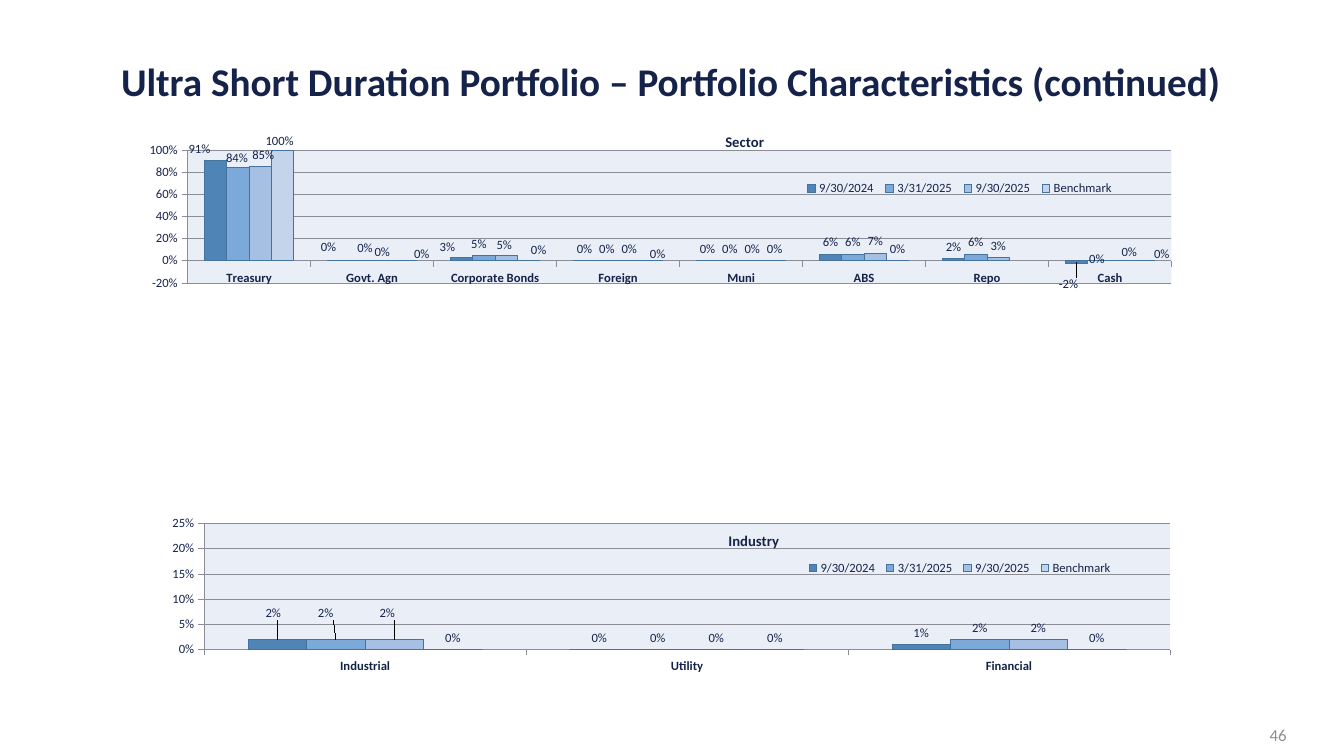
from pptx import Presentation
from pptx.chart.data import CategoryChartData
from pptx.dml.color import RGBColor
from pptx.enum import chart as ec, text
from pptx.oxml import parse_xml
from pptx.oxml.ns import nsdecls
from pptx.util import Inches, Pt

NAVY = RGBColor(0x15, 0x23, 0x4A)
NAVY_ALT = RGBColor(0x15, 0x22, 0x49)
GRAY = RGBColor(0x8C, 0x8D, 0x96)
BAR_LINE = RGBColor(0x43, 0x73, 0x9E)
WHITE = RGBColor(0xFF, 0xFF, 0xFF)
PLOT_FILL = RGBColor(0xEA, 0xEF, 0xF7)
BAR_FILLS = [RGBColor(0x4E, 0x85, 0xB6), RGBColor(0x7A, 0xA9, 0xDA),
             RGBColor(0xA5, 0xC0, 0xE3), RGBColor(0xC4, 0xD5, 0xEB)]
PERIODS = ["9/30/2024", "3/31/2025", "9/30/2025", "Benchmark"]
LABEL_FONT = {"size": Pt(9), "name": "Calibri", "bold": False}

CHARTS = [
    {"title": "Sector", "box": (1.15, 1.23, 10.94, 1.97),
     "cats": ["Treasury", "Govt. Agn", "Corporate Bonds", "Foreign", "Muni", "ABS", "Repo", "Cash"],
     "values": [(0.91, 0, 0.03, 0, 0, 0.06, 0.02, -0.02),
                (0.84, 0, 0.05, 0, 0, 0.06, 0.06, 0),
                (0.85, 0, 0.05, 0, 0, 0.07, 0.03, 0),
                (1, 0, 0, 0, 0, 0, None, 0)],
     "scale": (-0.2, 1, 0.2),
     "plot": {"x": 0.065, "y": 0.131, "w": 0.892, "h": 0.67},
     "heading": {"x": 0.55, "y": 0.03},
     "legend": {"x": 0.62, "y": 0.28, "w": 0.29, "h": 0.09},
     "shifts": [{0: (-0.16, 0.01), 1: (-0.1, -0.02), 2: (-0.14, 0.01), 7: (-0.08, 0.1)},
                {0: (-0.01, 0.02), 1: (0.04, -0.01), 2: (-0.05, 0), 7: (-0.02, 0.1)},
                {0: (0.03, 0), 1: (-0.01, 0.03), 2: (-0.02, 0.01), 7: (0.08, 0.03)},
                {0: (-0.03, 0.03), 1: (0.16, 0.05), 2: (0.1, 0.01), 3: (0.06, 0.05),
                 7: (0.18, 0.05)}]},
    {"title": "Industry", "box": (1.15, 5.1, 10.8, 1.82),
     "cats": ["Industrial", "Utility", "Financial"],
     "values": [(0.02, 0, 0.01), (0.02, 0, 0.02), (0.02, 0, 0.02), (0, 0, 0)],
     "scale": (0, 0.25, 0.05),
     "plot": {"x": 0.081, "y": 0.052, "w": 0.887, "h": 0.687},
     "heading": {"x": 0.56, "y": 0.08},
     "legend": {"x": 0.63, "y": 0.25, "w": 0.29, "h": 0.09},
     "shifts": [{0: (-0.04, -0.15)}, {0: (-0.1, -0.15)}, {0: (-0.07, -0.15)}, {}]},
]


def style(font, color=NAVY, **values):
    for name, value in {**LABEL_FONT, **values}.items():
        setattr(font, name, value)
    font.color.rgb = color


def layout(places, target="", edge=False):
    parts = f'<c:layoutTarget val="{target}"/>' if target else ""
    if edge:
        parts += '<c:xMode val="edge"/><c:yMode val="edge"/>'
    parts += "".join(f'<c:{k} val="{v:.4f}"/>' for k, v in places.items())
    return parse_xml(f'<c:layout {nsdecls("c")}><c:manualLayout>{parts}</c:manualLayout></c:layout>')


prs = Presentation()
prs.slide_width, prs.slide_height = Inches(13.33), Inches(7.5)
s = prs.slides.add_slide(prs.slide_layouts[5])

title = s.shapes.title
title.left, title.top, title.width, title.height = map(Inches, (0.64, 0.58, 12.02, 0.5))
tf = title.text_frame
tf.auto_size = text.MSO_AUTO_SIZE.NONE
tf.vertical_anchor = text.MSO_ANCHOR.MIDDLE
p = tf.paragraphs[0]
p.alignment, p.line_spacing = text.PP_ALIGN.CENTER, 0.9
for words, color in (("Ultra ", NAVY_ALT),
                     ("Short Duration Portfolio – Portfolio Characteristics (continued)", NAVY)):
    r = p.add_run()
    r.text = words
    style(r.font, color, size=Pt(28), bold=True)

for spec_row in CHARTS:
    data = CategoryChartData(number_format="0%")
    data.categories = spec_row["cats"]
    for period, values in zip(PERIODS, spec_row["values"]):
        data.add_series(period, values)
    box = spec_row["box"]
    chart = s.shapes.add_chart(ec.XL_CHART_TYPE.COLUMN_CLUSTERED, *map(Inches, box), data).chart
    style(chart.font)

    chart.has_title = True
    heading = chart.chart_title
    p = heading.text_frame.paragraphs[0]
    r = p.add_run()
    r.text = spec_row["title"]
    style(r.font, size=Pt(10.5), bold=True)
    heading.include_in_layout = True

    chart.has_legend = True
    legend = chart.legend
    legend.position = ec.XL_LEGEND_POSITION.RIGHT
    legend.include_in_layout = True
    style(legend.font)

    cat, val = chart.category_axis, chart.value_axis
    val.minimum_scale, val.maximum_scale, val.major_unit = spec_row["scale"]
    val.tick_labels.number_format = "0%"
    val.tick_labels.number_format_is_linked = False
    val.has_major_gridlines = True
    for axis, bold in ((cat, True), (val, False)):
        axis.major_tick_mark = ec.XL_TICK_MARK.OUTSIDE
        style(axis.tick_labels.font, bold=bold)
    for line in (cat.format.line, val.format.line, val.major_gridlines.format.line):
        line.color.rgb, line.width = GRAY, Pt(0.5)

    plot = chart.plots[0]
    plot.gap_width, plot.overlap, plot.vary_by_categories = 150, 0, False
    for ser, fill, shifts in zip(plot.series, BAR_FILLS, spec_row["shifts"]):
        ser.invert_if_negative = False
        ser.format.fill.solid()
        ser.format.fill.fore_color.rgb = fill
        ser.format.line.color.rgb, ser.format.line.width = BAR_LINE, Pt(0.5)
        labels = ser.data_labels
        labels.show_value = True
        labels.number_format, labels.number_format_is_linked = "0%", False
        labels.position = ec.XL_LABEL_POSITION.OUTSIDE_END
        style(labels.font)
        for i in shifts:
            label = ser.points[i].data_label
            style(label.font)
            label.position = ec.XL_LABEL_POSITION.OUTSIDE_END
        for el, (dx, dy) in zip(ser._element.xpath(".//c:dLbl"), shifts.values()):
            el.insert(1, layout({"x": dx / box[2], "y": dy / box[3]}))
            el.insert(2, parse_xml(f'<c:numFmt {nsdecls("c")} formatCode="0%" sourceLinked="0"/>'))

    root = chart._chartSpace
    for tag, key, target in (("plotArea", "plot", "inner"), ("title", "heading", ""),
                             ("legend", "legend", "")):
        el = root.xpath(f"c:chart/c:{tag}")[0]
        for old in el.xpath("c:layout"):
            el.remove(old)
        place = layout(spec_row[key], target, edge=True)
        if tag == "plotArea":
            el.insert(0, place)
        else:
            el.xpath("c:overlay")[0].addprevious(place)
    plot_back, chart_back = [
        parse_xml(f'<c:spPr {nsdecls("c", "a")}><a:solidFill><a:srgbClr val="{color}"/></a:solidFill>'
                  '<a:ln><a:noFill/></a:ln></c:spPr>') for color in (PLOT_FILL, WHITE)]
    root.xpath("c:chart/c:plotArea")[0].append(plot_back)
    root.xpath("c:txPr")[0].addprevious(chart_back)

sp = s.shapes.add_textbox(*map(Inches, (9.86, 7.09, 3, 0.4)))
tf = sp.text_frame
tf.word_wrap = True
tf.vertical_anchor = text.MSO_ANCHOR.MIDDLE
p = tf.paragraphs[0]
p.alignment = text.PP_ALIGN.RIGHT
r = p.add_run()
r.text = "46"
style(r.font, GRAY, size=Pt(12))

prs.save("out.pptx")
